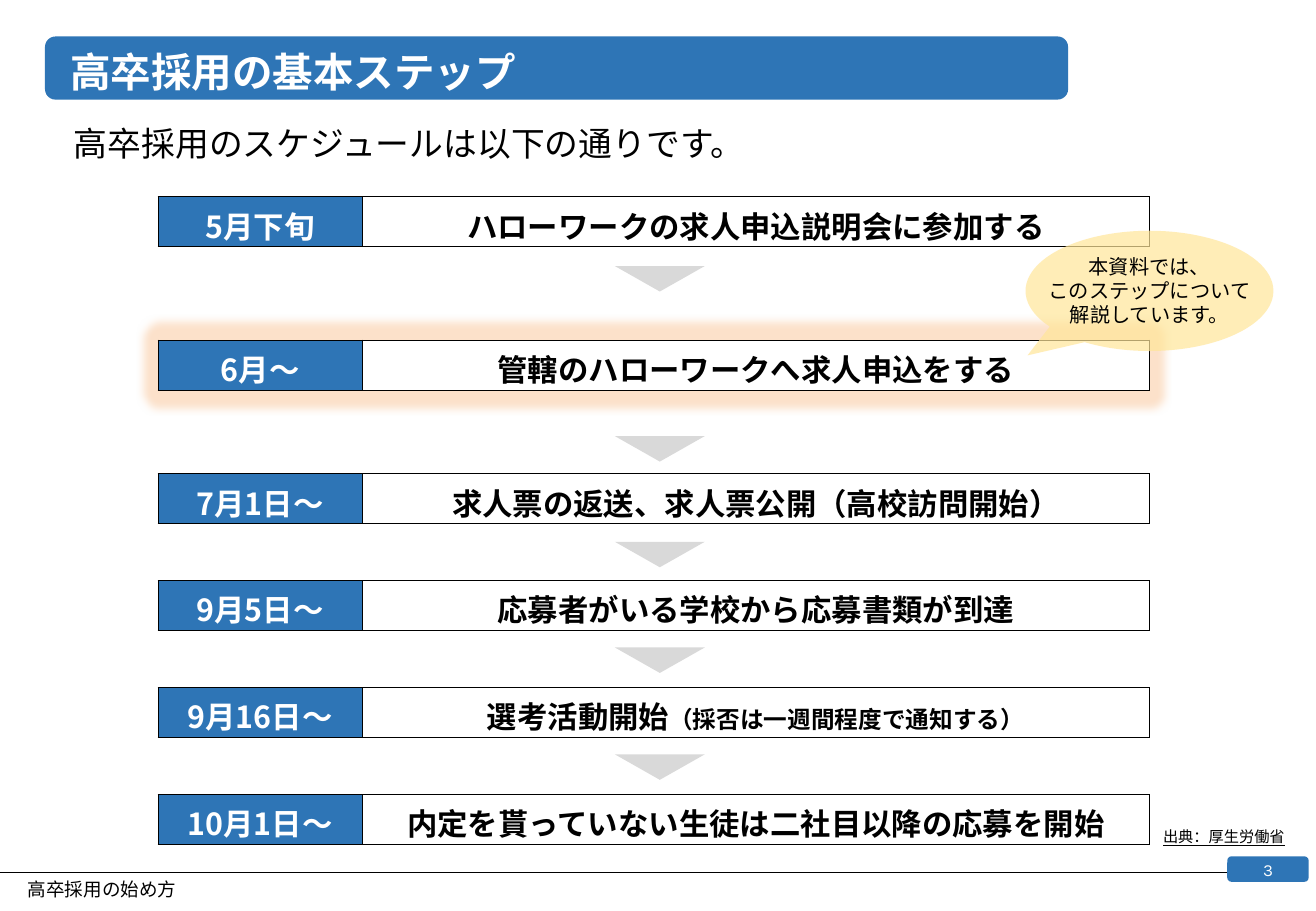
from dataclasses import dataclass

from lxml import etree
from pptx import Presentation
from pptx.dml.color import RGBColor
from pptx.enum.shapes import MSO_CONNECTOR, MSO_SHAPE
from pptx.enum.text import MSO_ANCHOR, PP_ALIGN
from pptx.oxml.ns import qn
from pptx.util import Inches, Pt

ROUNDED = MSO_SHAPE.ROUNDED_RECTANGLE
TRIANGLE = MSO_SHAPE.ISOSCELES_TRIANGLE
CALLOUT = MSO_SHAPE.OVAL_CALLOUT
STRAIGHT = MSO_CONNECTOR.STRAIGHT
TOP, MIDDLE = MSO_ANCHOR.TOP, MSO_ANCHOR.MIDDLE
LEFT, CENTER, RIGHT = PP_ALIGN.LEFT, PP_ALIGN.CENTER, PP_ALIGN.RIGHT


@dataclass(frozen=True)
class Theme:
    blue: str = "2E75B6"
    white: str = "FFFFFF"
    black: str = "000000"
    arrow: str = "D9D9D9"
    glow: str = "FCE1CA"
    callout: str = "FFE699"
    font: str = "Noto Sans CJK JP"
    number_font: str = "Karla"
    title: int = 24
    lead: int = 20
    step: int = 18
    note: int = 14
    remark: int = 12
    footer: int = 11
    number: int = 10
    source: int = 9


THEME = Theme()

# Top of the row, distance down to its arrow, date, task, smaller note
STEPS = [
    (1.62, 0.57, "5月下旬", "ハローワークの求人申込説明会に参加する", ""),
    (2.8, 0.79, "6月～", "管轄のハローワークへ求人申込をする", ""),
    (3.9, 0.56, "7月1日～", "求人票の返送、求人票公開（高校訪問開始）", ""),
    (4.78, 0.55, "9月5日～", "応募者がいる学校から応募書類が到達", ""),
    (5.66, 0.55, "9月16日～", "選考活動開始", "（採否は一週間程度で通知する）"),
    (6.54, None, "10月1日～", "内定を貰っていない生徒は二社目以降の応募を開始", ""),
]
REMARK = ["本資料では、", "このステップについて", "解説しています。"]


def add_span(para, text, size, color=THEME.black, name=THEME.font, **extra):
    span = para.add_run()
    span.text = text
    for key, value in {"name": name, "size": Pt(size), **extra}.items():
        setattr(span.font, key, value)
    span.font.color.rgb = RGBColor.from_string(color)
    latin = span.font._element.find(qn("a:latin"))
    east_asian = etree.Element(qn("a:ea"), typeface=name)
    latin.addnext(east_asian)


def add_text(page, box, lines, size, align=LEFT, anchor=TOP, spacing=None, **style):
    frame = page.shapes.add_textbox(*map(Inches, box)).text_frame
    frame.word_wrap = True
    frame.vertical_anchor = anchor
    for index, line in enumerate(lines):
        para = frame.add_paragraph() if index else frame.paragraphs[0]
        para.alignment = align
        para.line_spacing = spacing
        add_span(para, line, size, **style)


def add_block(page, kind, box, color):
    block = page.shapes.add_shape(kind, *map(Inches, box))
    block.shadow.inherit = False
    block.fill.solid()
    block.fill.fore_color.rgb = RGBColor.from_string(color)
    block.line.fill.background()
    return block


def add_header(page, box):
    left, top, width, height = box
    add_block(page, ROUNDED, box, THEME.blue)
    add_text(page, (left + 0.11, top + 0.1, width - 0.46, height - 0.1),
             ["高卒採用の基本ステップ"], THEME.title, anchor=MIDDLE, spacing=0.9,
             color=THEME.white, bold=True)
    add_text(page, (left + 0.14, top + 0.7, 7.47, 0.37),
             ["高卒採用のスケジュールは以下の通りです。"], THEME.lead, spacing=0.9)


def add_footer(page, box):
    left, top, width, height = box
    badge_left = left + width - 0.73
    rule = page.shapes.add_connector(
        STRAIGHT, *map(Inches, (left, top + 0.13, badge_left, top + 0.13)))
    rule.line.width = Pt(0.25)
    rule.line.color.rgb = RGBColor.from_string(THEME.black)
    etree.SubElement(rule._element.spPr, qn("a:effectLst"))
    add_block(page, ROUNDED, (badge_left, top, 0.67, 0.21), THEME.blue)
    add_text(page, (badge_left, top - 0.09, 0.67, 0.4), ["3"], THEME.number,
             CENTER, MIDDLE, color=THEME.white, name=THEME.number_font)
    add_text(page, (left + 0.13, top + 0.15, 3.62, height - 0.15),
             ["高卒採用の始め方"], THEME.footer, spacing=0.9)
    add_text(page, (8.31, top - 0.27, 2.36, 0.23), ["出典：厚生労働省"],
             THEME.source, RIGHT, spacing=0.9, underline=True)


def format_cell(cell, fill):
    borders = cell._tc.get_or_add_tcPr()
    for side in ("a:lnL", "a:lnR", "a:lnT", "a:lnB"):
        border = etree.SubElement(borders, qn(side), w=str(Pt(0.5)))
        paint = etree.SubElement(border, qn("a:solidFill"))
        etree.SubElement(paint, qn("a:srgbClr"), val=THEME.black)
    cell.fill.solid()
    cell.fill.fore_color.rgb = RGBColor.from_string(fill)
    cell.vertical_anchor = MIDDLE
    para = cell.text_frame.paragraphs[0]
    para.alignment = CENTER
    return para


def add_step(page, box, date, task, note):
    table = page.shapes.add_table(1, 2, *map(Inches, box)).table
    table.first_row = table.horz_banding = False
    date_width = 1.68
    for column, width in zip(table.columns, (date_width, box[2] - date_width)):
        column.width = Inches(width)
    para = format_cell(table.cell(0, 0), THEME.blue)
    add_span(para, date, THEME.step, THEME.white, bold=True)
    para = format_cell(table.cell(0, 1), THEME.white)
    add_span(para, task, THEME.step, bold=True)
    if note:
        add_span(para, note, THEME.note, bold=True)


def add_schedule(page, left, width):
    # Soft glow behind the highlighted step
    glow = add_block(page, ROUNDED, (left - 0.18, STEPS[1][0] - 0.21, width + 0.36, 0.83),
                     THEME.glow)
    effects = glow._element.spPr.find(qn("a:effectLst"))
    etree.SubElement(effects, qn("a:softEdge"), rad=str(Pt(5)))

    # Step rows with an arrow down to the next one
    for top, arrow_offset, date, task, note in STEPS:
        add_step(page, (left, top, width, 0.41), date, task, note)
        if arrow_offset:
            arrow = add_block(page, TRIANGLE, (left + 3.76, top + arrow_offset, 0.74, 0.21),
                              THEME.arrow)
            arrow.rotation = 180


def add_remark(page, box):
    left, top, width, height = box
    bubble = add_block(page, CALLOUT, box, THEME.callout)
    bubble.adjustments[0] = -0.492
    bubble.adjustments[1] = 0.536
    color = bubble._element.spPr.find(qn("a:solidFill"))[0]
    etree.SubElement(color, qn("a:alpha"), val="70000")
    add_text(page, (left, top + 0.14, width, height - 0.28), REMARK, THEME.remark, CENTER)


def main():
    deck = Presentation()
    deck.slide_width, deck.slide_height = Inches(10.83), Inches(7.5)
    page = deck.slides.add_slide(deck.slide_layouts[6])
    add_header(page, (0.37, 0.3, 8.42, 0.52))
    add_footer(page, (0, 7.05, 10.83, 0.45))
    add_schedule(page, 1.3, 8.16)
    add_remark(page, (8.44, 1.9, 2.04, 0.99))
    deck.save("out.pptx")


if __name__ == "__main__":
    main()
